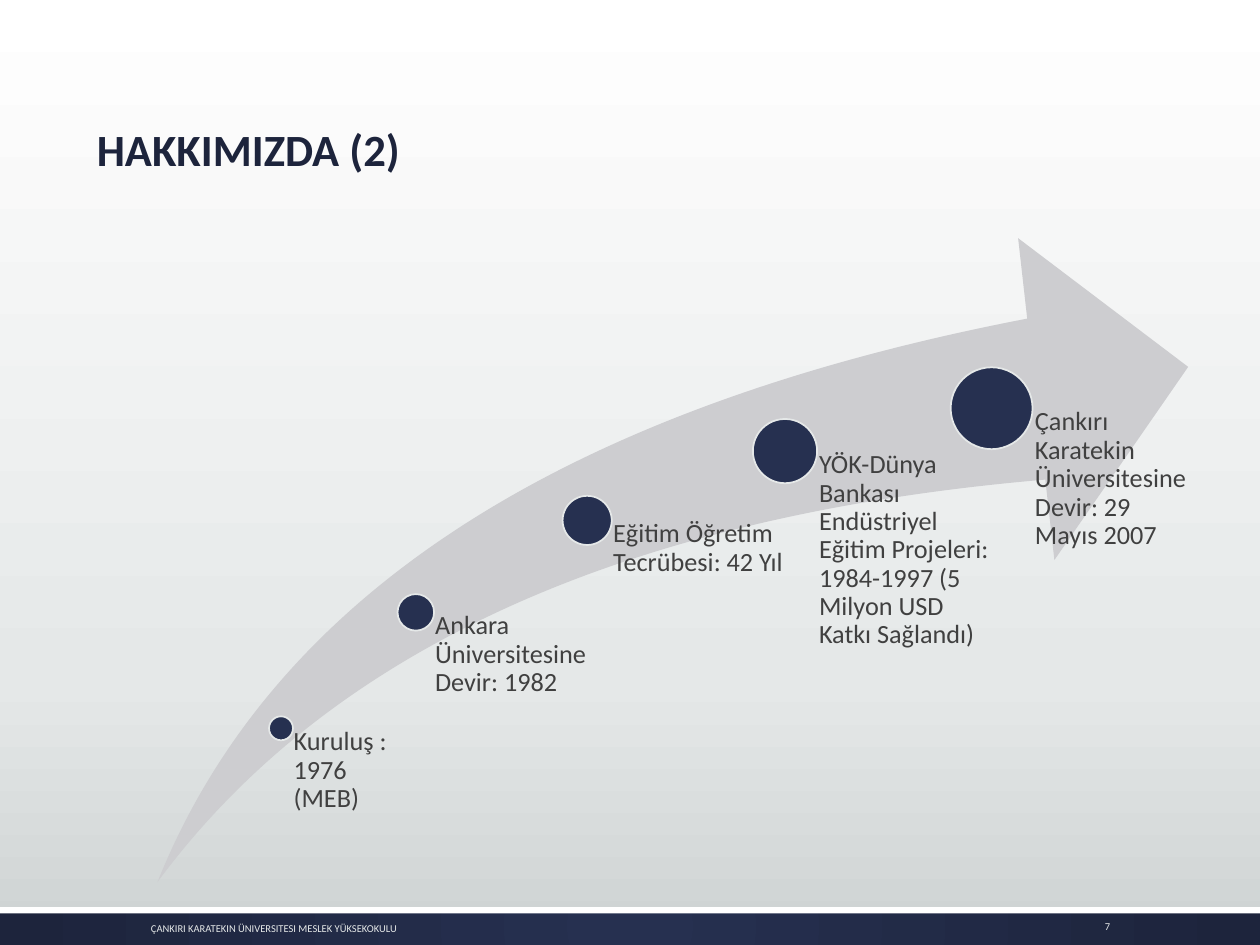
from lxml import etree
from pptx import Presentation
from pptx.dml.color import RGBColor
from pptx.enum import shapes, text
from pptx.oxml.ns import qn
from pptx.util import Inches, Pt

COLORS = {"navy": "263050", "dark": "1D243C", "white": "FFFFFF", "pale": "E5E8E8",
          "mist": "CDD2D2", "arrow": "CDCDD0", "body": "404040"}
FONT = "Calibri"
TITLE = "HAKKIMIZDA (2)"
FOOTER = "ÇANKIRI KARATEKIN ÜNIVERSITESI MESLEK YÜKSEKOKULU"
PAGE = "7"
# Milestones: centre x, centre y, circle diameter, label width, label
MILESTONES = [
    (2.23, 5.78, 0.19, 1.07, "Kuruluş : 1976 (MEB)"),
    (3.30, 4.86, 0.29, 1.36, "Ankara Üniversitesine Devir: 1982"),
    (4.66, 4.13, 0.39, 1.58, "Eğitim Öğretim Tecrübesi: 42 Yıl"),
    (6.23, 3.58, 0.51, 1.64,
     "YÖK-Dünya Bankası Endüstriyel Eğitim Projeleri: 1984-1997 (5 Milyon USD Katkı Sağlandı)"),
    (7.87, 3.24, 0.65, 1.64, "Çankırı Karatekin Üniversitesine Devir: 29 Mayıs 2007"),
]
ARROW_BOTTOM = 7.0
INSET_RATIO = 0.53  # label inset relative to the circle diameter

prs = Presentation()
prs.slide_width, prs.slide_height = Inches(10), Inches(7.5)
s = prs.slides.add_slide(prs.slide_layouts[6])


def rgb(name):
    return RGBColor.from_string(COLORS[name])


def add_gradient(fill, element, stops, radial=False):
    fill.gradient()
    grad = element.find(".//" + qn("a:gradFill"))
    for child in list(grad):
        grad.remove(child)
    stop_list = etree.SubElement(grad, qn("a:gsLst"))
    for percent, color in stops:
        stop = etree.SubElement(stop_list, qn("a:gs"), pos=str(percent * 1000))
        etree.SubElement(stop, qn("a:srgbClr"), val=COLORS[color])
    if radial:
        shade = etree.SubElement(grad, qn("a:path"), path="circle")
        etree.SubElement(shade, qn("a:fillToRect"), l="50000", t="50000", r="50000", b="50000")
    else:
        etree.SubElement(grad, qn("a:lin"), ang="5400000", scaled="0")


def add_shape(kind, box, color=None, line=None):
    sp = s.shapes.add_shape(kind, *map(Inches, box))
    sp.shadow.inherit = False
    if color:
        sp.fill.solid()
        sp.fill.fore_color.rgb = rgb(color)
    if line:
        sp.line.color.rgb = rgb(line)
        sp.line.width = Pt(1)
    else:
        sp.line.fill.background()
    return sp


def add_text(box, content, size, color, anchor, bold=False, spacing=None, align=None):
    tf = s.shapes.add_textbox(*map(Inches, box)).text_frame
    tf.word_wrap = True
    tf.vertical_anchor = anchor
    p = tf.paragraphs[0]
    p.line_spacing = spacing
    p.alignment = align
    r = p.add_run()
    r.text = content
    r.font.name, r.font.size, r.font.bold = FONT, Pt(size), bold
    r.font.color.rgb = rgb(color)
    return tf


SHAPE, ANCHOR = shapes.MSO_SHAPE, text.MSO_ANCHOR

# Background and footer band
add_gradient(s.background.fill, s._element, [(0, "white"), (72, "pale"), (100, "mist")])
band = add_shape(SHAPE.RECTANGLE, (0, 7.2, 10, 0.3))
add_gradient(band.fill, band._element, [(0, "navy"), (100, "dark")], radial=True)
add_shape(SHAPE.RECTANGLE, (0, 7.2, 10, 0.05), "white")

# Title
add_text((0.67, 0.51, 8.58, 0.94), TITLE, 25.5, "dark", ANCHOR.BOTTOM, bold=True, spacing=0.9)

# Rising arrow
arrow = add_shape(SHAPE.SWOOSH_ARROW, (1.25, 1.89, 8.18, ARROW_BOTTOM - 1.89), "arrow")
arrow.adjustments[0] = arrow.adjustments[1] = 0.25

# Milestones: each label box starts at its circle's centre
for x, y, size, width, label in MILESTONES:
    add_shape(SHAPE.OVAL, (x - size / 2, y - size / 2, size, size), "navy", "pale")
    tf = add_text((x, y, width, ARROW_BOTTOM - y), label, 15, "body", ANCHOR.TOP, spacing=0.9)
    tf.margin_left = Inches(size * INSET_RATIO)
    tf.margin_top = tf.margin_right = tf.margin_bottom = 0

# Footer and page number
add_text((1.1, 7.24, 5.87, 0.26), FOOTER, 6, "pale", ANCHOR.MIDDLE)
add_text((8.38, 7.22, 0.53, 0.26), PAGE, 6, "pale", ANCHOR.MIDDLE, align=text.PP_ALIGN.RIGHT)

prs.save("out.pptx")
